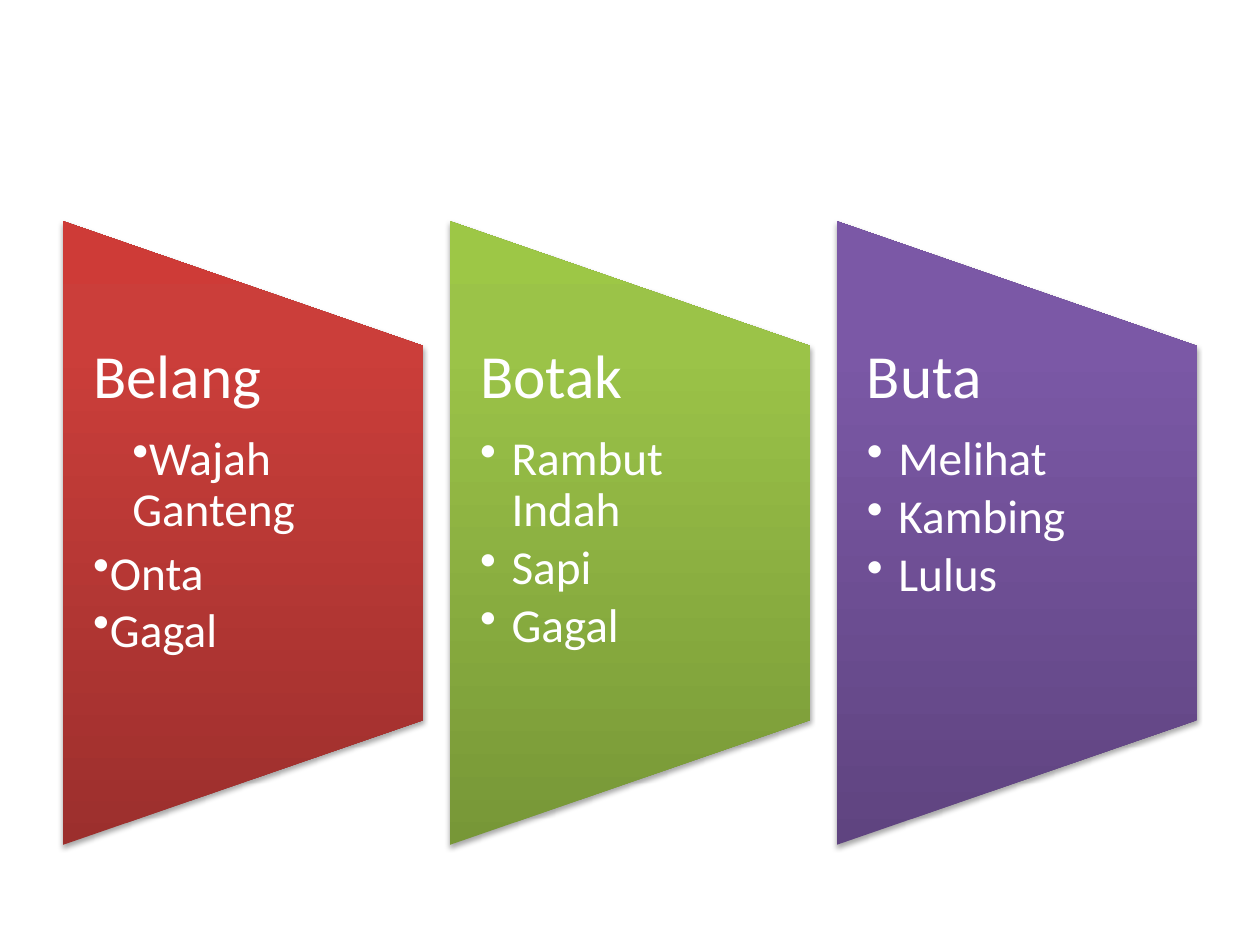
from lxml.etree import SubElement
from pptx import Presentation
from pptx.dml.color import RGBColor
from pptx.enum.shapes import MSO_SHAPE
from pptx.enum.text import MSO_ANCHOR
from pptx.oxml import parse_xml
from pptx.oxml.ns import nsdecls, qn
from pptx.util import Inches, Pt

prs = Presentation()
prs.slide_width, prs.slide_height = Inches(10), Inches(7.5)
s = prs.slides.add_slide(prs.slide_layouts[6])

LEFT, PITCH, COL_W = 0.5, 3.07, 2.86
PANEL_H, MIDDLE = 4.95, 4.23
TEXT_TOP, TEXT_H = 2.74, 2.97
HANGING, FLUSH = (0.25, -0.25), (0, 0)

# title, gradient from bottom to top, items as (text, (margin, indent), line spacing, space after)
columns = [
    ("Belang", ("9C2F2D", "CB3E3A", "CE3B37"),
     [("Wajah Ganteng", (0.31, 0), 0.9, 4), ("Onta", FLUSH, 1, 0), ("Gagal", FLUSH, 1, 0)]),
    ("Botak", ("779737", "9BC348", "9DC746"),
     [(t, HANGING, 0.9, 4) for t in ("Rambut Indah", "Sapi", "Gagal")]),
    ("Buta", ("5F4480", "7B58A6", "7C57A8"),
     [(t, HANGING, 0.9, 4) for t in ("Melihat", "Kambing", "Lulus")]),
]


def add_text(p, text, size, color="FFFFFF", line=0.9, after=0, bullet=None):
    """Fill paragraph p; bullet is its (left margin, first-line indent) in inches."""
    p.line_spacing, p.space_after = line, Pt(after)
    if bullet:
        p.level = 1
        pPr = p._p.get_or_add_pPr()
        pPr.set("marL", str(Inches(bullet[0])))
        pPr.set("indent", str(Inches(bullet[1])))
        SubElement(pPr, qn("a:buChar")).set("char", "•")
    r = p.add_run()
    r.text = text
    r.font.name, r.font.size = "Calibri", Pt(size)
    r.font.color.rgb = RGBColor.from_string(color)


def shade(sp, colors):
    """Give sp an upward gradient and a soft shadow that both ignore its rotation."""
    stops = "".join(f'<a:gs pos="{pos}000"><a:srgbClr val="{c}"/></a:gs>'
                    for pos, c in zip((0, 80, 100), colors))
    sp.line.fill.background()
    sp.shadow.inherit = False
    spPr = sp._element.spPr
    spPr.find(qn("a:ln")).addprevious(parse_xml(
        f'<a:gradFill {nsdecls("a")} rotWithShape="0"><a:gsLst>{stops}</a:gsLst>'
        '<a:lin ang="16200000" scaled="0"/></a:gradFill>'))
    spPr.find(qn("a:effectLst")).append(parse_xml(
        f'<a:outerShdw {nsdecls("a")} blurRad="{Pt(3.1)}" dist="{Pt(1.8)}" dir="5400000" '
        'rotWithShape="0"><a:srgbClr val="000000"><a:alpha val="35000"/></a:srgbClr></a:outerShdw>'))


for i, (title, colors, items) in enumerate(columns):
    x = LEFT + i * PITCH
    panel = s.shapes.add_shape(
        MSO_SHAPE.FLOWCHART_MANUAL_OPERATION,
        Inches(x + (COL_W - PANEL_H) / 2), Inches(MIDDLE - COL_W / 2),
        Inches(PANEL_H), Inches(COL_W))
    panel.rotation = 270
    shade(panel, colors)

    tf = s.shapes.add_textbox(Inches(x), Inches(TEXT_TOP), Inches(COL_W), Inches(TEXT_H)).text_frame
    tf.word_wrap = True
    tf.vertical_anchor = MSO_ANCHOR.TOP
    tf.margin_left, tf.margin_right = Inches(0.24), Inches(0.25)
    tf.margin_top = tf.margin_bottom = 0
    add_text(tf.paragraphs[0], title, 35, after=13)
    for text, bullet, line, after in items:
        add_text(tf.add_paragraph(), text, 27, line=line, after=after, bullet=bullet)

prs.save("out.pptx")
